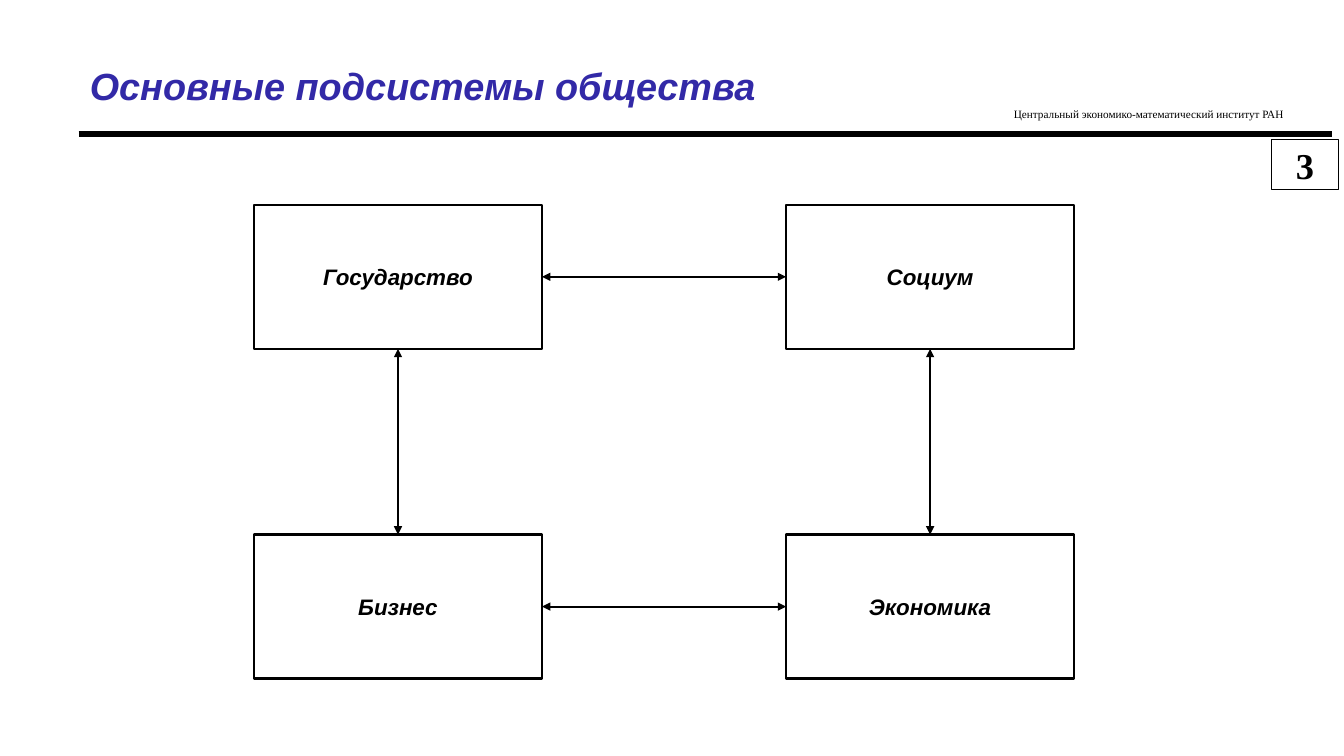
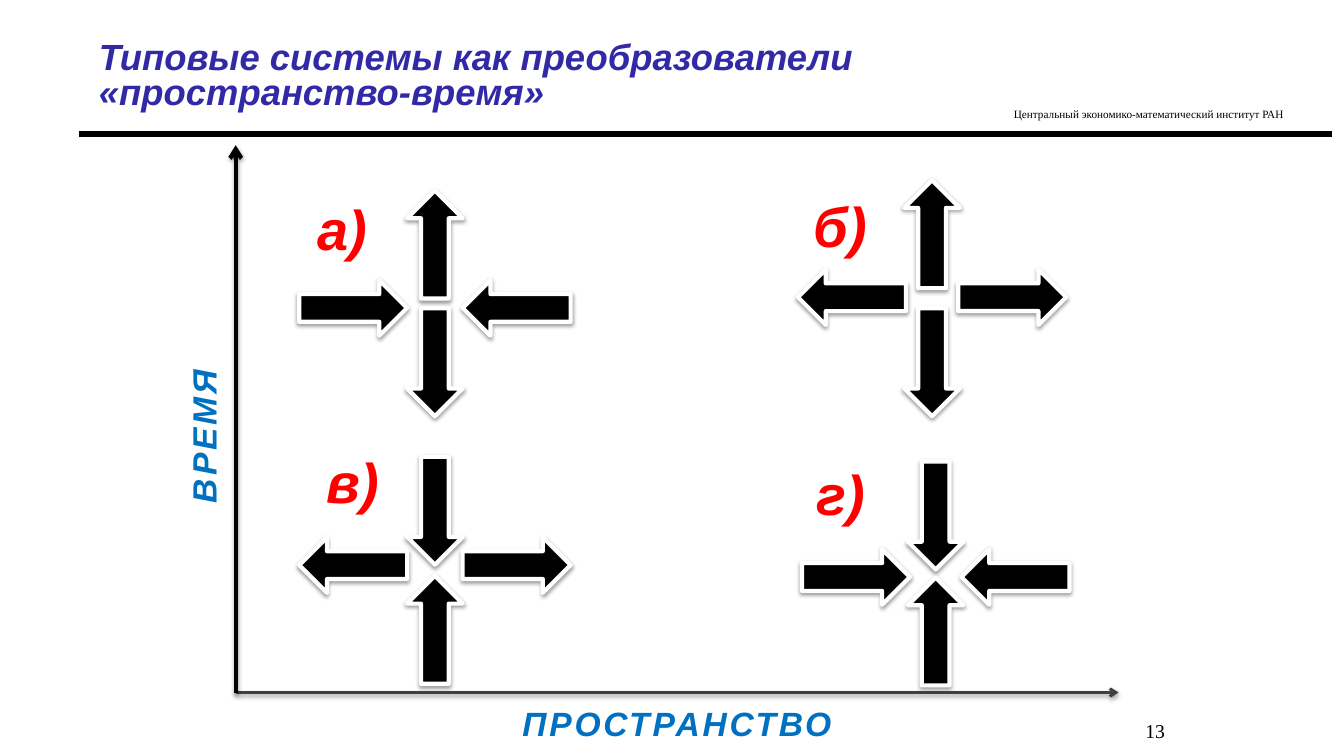
from dataclasses import dataclass

from lxml.etree import SubElement
from pptx import Presentation
from pptx.dml.color import RGBColor
from pptx.enum.shapes import MSO_CONNECTOR, MSO_SHAPE
from pptx.enum.text import MSO_ANCHOR, MSO_AUTO_SIZE, PP_ALIGN
from pptx.oxml.ns import qn
from pptx.util import Cm, Pt


@dataclass(frozen=True)
class Theme:
    sans: str = "Arial"
    serif: str = "Times New Roman"
    ink: RGBColor = RGBColor(0x00, 0x00, 0x00)
    axis_gray: RGBColor = RGBColor(0x3F, 0x3F, 0x3F)
    paper: RGBColor = RGBColor(0xFF, 0xFF, 0xFF)
    heading: RGBColor = RGBColor(0x32, 0x29, 0xA7)
    axis_name: RGBColor = RGBColor(0x00, 0x70, 0xC0)
    letter: RGBColor = RGBColor(0xFF, 0x00, 0x00)
    institute_size: int = 8
    page_size: int = 14
    subsystem_size: int = 16
    axis_size: int = 24
    badge_size: int = 26
    letter_size: int = 40


THEME = Theme()


@dataclass(frozen=True)
class Box:
    """A rectangle in centimetres."""
    left: float
    top: float
    width: float
    height: float

    @property
    def lengths(self):
        return [Cm(v) for v in (self.left, self.top, self.width, self.height)]


@dataclass(frozen=True)
class Cross:
    """Four arrows around a hub; distances run from the hub to arrow centres."""
    letter: str
    hub: tuple
    letter_offset: tuple
    above: float
    below: float
    aside: float
    time_inward: bool
    space_inward: bool


CROSSES = (
    Cross("а)", (10.96, 7.76), (-3.42, -3.14), 1.6, 1.37, 2.06, False, True),
    Cross("б)", (23.49, 7.49), (-3.4, -2.94), 1.59, 1.64, 2.02, False, False),
    Cross("в)", (10.96, 14.24), (-3.16, -3.24), 1.37, 1.63, 2.06, True, False),
    Cross("г)", (23.58, 14.54), (-3.49, -3.24), 1.55, 1.37, 2.01, True, True),
)


def write(shape, text, size, color, font=THEME.sans, strong=True, italic=True,
          align=PP_ALIGN.CENTER, anchor=MSO_ANCHOR.MIDDLE, wrap=True):
    frame = shape.text_frame
    frame.word_wrap = wrap
    frame.auto_size = MSO_AUTO_SIZE.NONE
    frame.vertical_anchor = anchor
    paragraph = frame.paragraphs[0]
    paragraph.text = text
    paragraph.alignment = align
    paragraph.font.name = font
    paragraph.font.size = Pt(size)
    paragraph.font.bold = strong
    paragraph.font.italic = italic
    paragraph.font.color.rgb = color
    return paragraph


def add_label(slide, box, text, size, color, **style):
    label = slide.shapes.add_textbox(*box.lengths)
    write(label, text, size, color, **style)
    return label


def set_effects(shape, opacity=0, distance=1.6):
    """Replace the theme shadow by a soft one below, or by none."""
    properties = shape.element.spPr
    effects = properties.find(qn("a:effectLst"))
    if effects is None:
        effects = SubElement(properties, qn("a:effectLst"))
    if opacity:
        shadow = SubElement(effects, qn("a:outerShdw"), blurRad=str(Pt(3.1)),
                            dist=str(Pt(distance)), dir="5400000", rotWithShape="0")
        tint = SubElement(shadow, qn("a:srgbClr"), val=str(THEME.ink))
        SubElement(tint, qn("a:alpha"), val=str(opacity * 1000))


def add_line(slide, start, end, width, color=THEME.ink, head=None, tail=None,
             opacity=0, distance=1.6):
    line = slide.shapes.add_connector(
        MSO_CONNECTOR.STRAIGHT, *[Cm(v) for v in (*start, *end)])
    line.line.color.rgb = color
    line.line.width = Pt(width)
    outline = line.element.spPr.find(qn("a:ln"))
    for tag, kind in (("a:headEnd", head), ("a:tailEnd", tail)):
        if kind:
            SubElement(outline, qn(tag), type=kind)
    set_effects(line, opacity, distance)
    return line


def add_frame_box(slide, box, line_width):
    outline = slide.shapes.add_shape(MSO_SHAPE.RECTANGLE, *box.lengths)
    outline.shadow.inherit = False
    outline.fill.background()
    outline.line.color.rgb = THEME.ink
    outline.line.width = Pt(line_width)
    return outline


def add_titled_slide(deck, title, box, size):
    slide = deck.slides.add_slide(deck.slide_layouts[5])
    heading = slide.shapes.title
    heading.left, heading.top, heading.width, heading.height = box.lengths
    paragraph = write(heading, title, size, THEME.heading,
                      align=PP_ALIGN.LEFT, anchor=MSO_ANCHOR.BOTTOM)
    paragraph.line_spacing = 0.8
    add_line(slide, (1.98, 3.38), (33.58, 3.38), 4)
    add_label(slide, Box(23.57, 2.59, 10.77, 0.58),
              "Центральный экономико-математический институт РАН",
              THEME.institute_size, THEME.ink, font=THEME.serif,
              strong=False, italic=False, anchor=MSO_ANCHOR.TOP)
    return slide


def add_subsystems(slide, area):
    """Four linked subsystems in the corners of the area."""
    width, height = 7.26, 3.63
    names = (("Государство", "Социум"), ("Бизнес", "Экономика"))
    grid = []
    for row, row_names in enumerate(names):
        grid.append([])
        for column, name in enumerate(row_names):
            place = Box(area.left + column * (area.width - width),
                        area.top + row * (area.height - height), width, height)
            subsystem = add_frame_box(slide, place, 1.5)
            write(subsystem, name, THEME.subsystem_size, THEME.ink)
            grid[row].append(subsystem)
    (state, society), (business, economy) = grid
    for first, first_site, second, second_site in (
            (state, 3, society, 1), (business, 3, economy, 1),
            (business, 0, state, 2), (economy, 0, society, 2)):
        link = add_line(slide, (0, 0), (1, 1), 1.5, head="triangle", tail="triangle")
        link.begin_connect(first, first_site)
        link.end_connect(second, second_site)


def add_block_arrow(slide, center, rotation):
    width, height = 2.72, 1.4
    place = Box(center[0] - width / 2, center[1] - height / 2, width, height)
    arrow = slide.shapes.add_shape(MSO_SHAPE.RIGHT_ARROW, *place.lengths)
    arrow.shadow.inherit = False
    arrow.rotation = rotation
    arrow.fill.solid()
    arrow.fill.fore_color.rgb = THEME.ink
    arrow.line.color.rgb = THEME.paper
    arrow.line.width = Pt(3)
    set_effects(arrow, opacity=38)


def add_cross(slide, cross):
    x, y = cross.hub
    for dx, dy, outward, inward in (
            (0, -cross.above, 270, cross.time_inward),
            (0, cross.below, 90, cross.time_inward),
            (-cross.aside, 0, 180, cross.space_inward),
            (cross.aside, 0, 0, cross.space_inward)):
        add_block_arrow(slide, (x + dx, y + dy), (outward + 180 * inward) % 360)
    shift_x, shift_y = cross.letter_offset
    add_label(slide, Box(x + shift_x, y + shift_y, 2.18, 2.24), cross.letter,
              THEME.letter_size, THEME.letter)


def add_axis_name(slide, center, name, rotation=0):
    width, height = 10.82, 1.35
    place = Box(center[0] - width / 2, center[1] - height / 2, width, height)
    label = add_label(slide, place, name, THEME.axis_size, THEME.axis_name)
    label.rotation = rotation
    for properties in label.element.iter(qn("a:defRPr")):
        properties.set("spc", "200")


def add_axes(slide, area):
    bottom = area.top + area.height
    origin = (area.left, bottom)
    add_line(slide, origin, (area.left + area.width, bottom), 2,
             THEME.axis_gray, tail="arrow", opacity=38)
    add_line(slide, origin, (area.left, area.top), 3,
             tail="arrow", opacity=35, distance=1.8)
    add_axis_name(slide, (area.left - 0.82, area.top + 7.34), "ВРЕМЯ", 270)
    add_axis_name(slide, (area.left + 11.12, bottom + 0.76), "ПРОСТРАНСТВО")


def build_subsystems_slide(deck):
    slide = add_titled_slide(deck, "Основные подсистемы общества",
                             Box(2.01, 0.43, 18.54, 2.41), 27)
    add_subsystems(slide, Box(6.4, 5.16, 20.67, 11.94))
    badge = add_frame_box(slide, Box(32.05, 3.51, 1.68, 1.27), 0.75)
    write(badge, "3", THEME.badge_size, THEME.ink, font=THEME.serif,
          italic=False, wrap=False)


def build_converters_slide(deck):
    slide = add_titled_slide(
        deck, "Типовые системы как преобразователи «пространство-время»",
        Box(2.24, 0.58, 20.04, 2.39), 26)
    for cross in CROSSES:
        add_cross(slide, cross)
    add_axes(slide, Box(5.94, 3.66, 22.25, 13.79))
    add_label(slide, Box(24.33, 17.78, 5.28, 1.27), "13", THEME.page_size,
              THEME.ink, font=THEME.serif, strong=False, italic=False,
              align=PP_ALIGN.RIGHT)


def main():
    deck = Presentation()
    deck.slide_width, deck.slide_height = Cm(33.87), Cm(19.05)
    build_subsystems_slide(deck)
    build_converters_slide(deck)
    deck.save("out.pptx")


if __name__ == "__main__":
    main()
